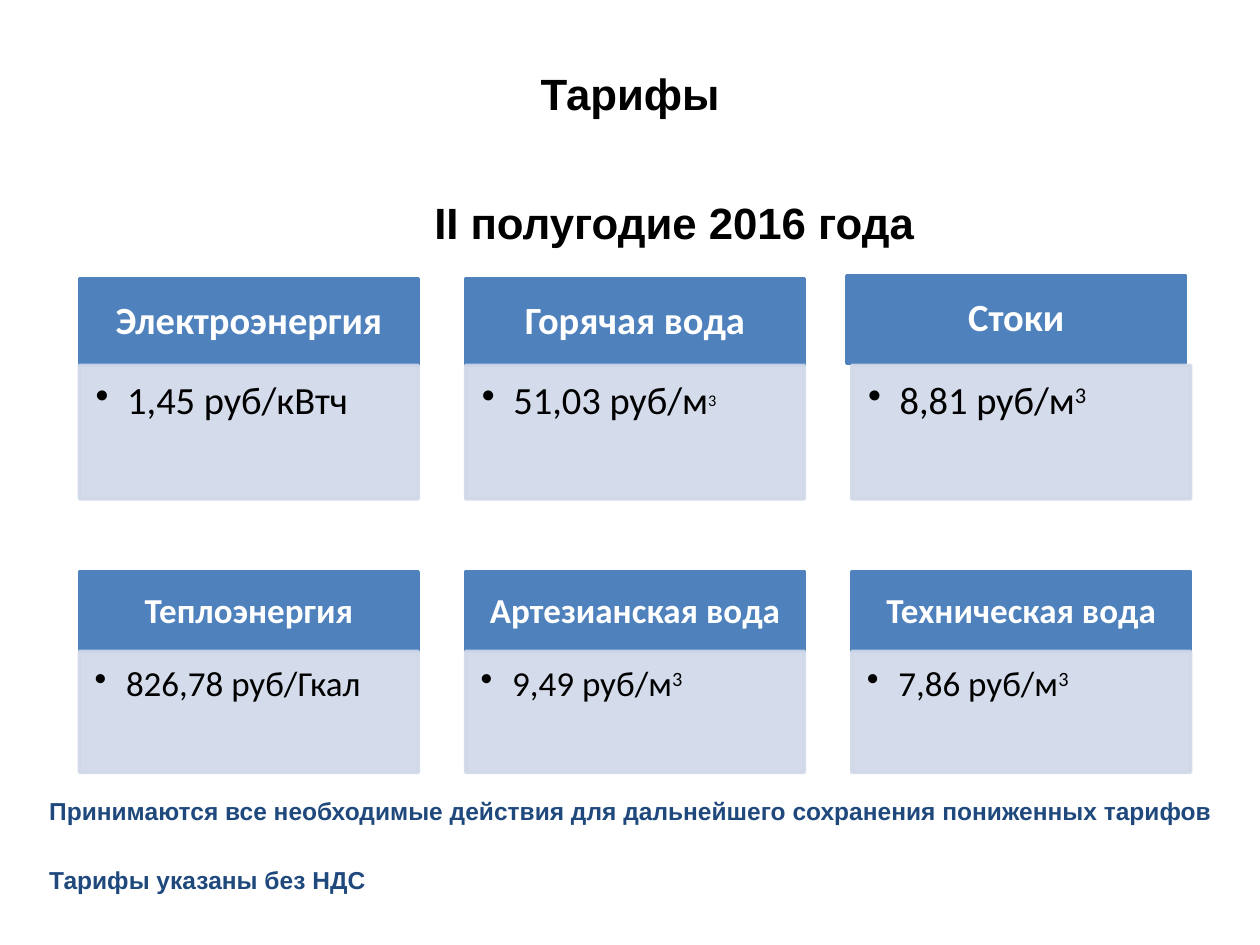
from lxml import etree
from pptx import Presentation
from pptx.dml.color import RGBColor
from pptx.enum.shapes import MSO_SHAPE
from pptx.enum.text import MSO_ANCHOR, PP_ALIGN
from pptx.oxml.ns import qn
from pptx.util import Inches, Pt

BLUE, PALE, NAVY = "4F81BD", "D0D8E8", "1F497D"
CARD_LEFT, CARD_STEP, CARD_WIDTH = 0.63, 3.065, 2.69

# Each tariff: name, price, superscript, superscript size
TOP_TARIFFS = [
    ("Электроэнергия", "1,45 руб/кВтч", "", 22),
    ("Горячая вода", "51,03 руб/м", "3", 16),
    ("Стоки", "8,81 руб/м", "3", 22),
]
BOTTOM_TARIFFS = [
    ("Теплоэнергия", "826,78 руб/Гкал", "", 20),
    ("Артезианская вода", "9,49 руб/м", "3", 20),
    ("Техническая вода", "7,86 руб/м", "3", 20),
]


def color(value):
    return RGBColor.from_string(value)


def style(font, name, size, value, bold=False):
    font.name, font.size, font.bold = name, Pt(size), bold
    font.color.rgb = color(value)


def set_frame(frame, insets, anchor):
    frame.word_wrap = True
    frame.vertical_anchor = anchor
    (frame.margin_left, frame.margin_top,
     frame.margin_right, frame.margin_bottom) = [Inches(i) for i in insets]


def add_text(page, box, lines, size, value, align=PP_ALIGN.LEFT,
             insets=(0, 0, 0, 0), anchor=MSO_ANCHOR.TOP, gap=0):
    shape = page.shapes.add_textbox(*[Inches(v) for v in box])
    frame = shape.text_frame
    set_frame(frame, insets, anchor)
    frame.text = "\n".join(lines)
    for index, para in enumerate(frame.paragraphs):
        para.alignment = align
        if index:
            para.space_before = Pt(gap)
        for span in para.runs:
            style(span.font, "Arial", size, value, bold=True)


def add_panel(page, box, fill, insets, anchor, opacity=100):
    panel = page.shapes.add_shape(MSO_SHAPE.RECTANGLE,
                                  *[Inches(v) for v in box])
    panel.shadow.inherit = False
    panel.fill.solid()
    panel.fill.fore_color.rgb = color(fill)
    panel.line.color.rgb = color(fill)
    panel.line.width = Pt(2)
    if opacity < 100:
        for node in panel.element.spPr.iter(qn("a:srgbClr")):
            alpha = etree.SubElement(node, qn("a:alpha"))
            alpha.set("val", str(opacity * 1000))
    set_frame(panel.text_frame, insets, anchor)
    para = panel.text_frame.paragraphs[0]
    para.line_spacing = 0.9
    return para


def add_bullet(para):
    properties = para._p.get_or_add_pPr()
    properties.set("marL", str(Inches(0.25)))
    properties.set("indent", str(-Inches(0.25)))
    etree.SubElement(properties, qn("a:buChar")).set("char", "•")


def add_card(page, head_box, price_box, tariff, size):
    name, price, power, power_size = tariff
    # Heading
    side, edge = (0.17, 0.1) if size == 22 else (0.16, 0.09)
    para = add_panel(page, head_box, BLUE, (side, edge, side, edge),
                     MSO_ANCHOR.MIDDLE)
    para.text = name
    para.alignment = PP_ALIGN.CENTER
    style(para.runs[0].font, "Calibri", size, "FFFFFF", bold=True)

    # Price
    inset = 0.13 if size == 22 else 0.12
    para = add_panel(page, price_box, PALE, (inset, inset, side, inset + 0.05),
                     MSO_ANCHOR.TOP, opacity=90)
    para.alignment = PP_ALIGN.LEFT
    add_bullet(para)
    span = para.add_run()
    span.text = price
    style(span.font, "Calibri", size, "000000")
    if power:
        span = para.add_run()
        span.text = power
        style(span.font, "Calibri", power_size, "000000")
        span.font._element.set("baseline", "30000")


def add_card_row(page, box, tariffs, size, head_height, moved_heads):
    left, top, width, height = box
    for index, tariff in enumerate(tariffs):
        x = left + index * CARD_STEP
        dx, dy = moved_heads.get(index, (0, 0))
        head_box = (x + dx, top + dy, width, head_height)
        price_box = (x, top + head_height, width, height - head_height)
        add_card(page, head_box, price_box, tariff, size)


def main():
    deck = Presentation()
    deck.slide_width, deck.slide_height = Inches(10), Inches(7.5)
    page = deck.slides.add_slide(deck.slide_layouts[6])

    # Title and period
    add_text(page, (0.5, 0.3, 9, 0.87), ["Тарифы"], 25, "000000",
             PP_ALIGN.CENTER, anchor=MSO_ANCHOR.MIDDLE)
    add_text(page, (0.55, 1.33, 8.94, 0.66), ["II полугодие 2016 года"], 25,
             "000000", PP_ALIGN.CENTER, insets=(0.66, 0.22, 0, 0))

    # Tariff cards; the third heading of the top row sits slightly off the grid
    add_card_row(page, (CARD_LEFT, 2.21, CARD_WIDTH, 1.75), TOP_TARIFFS, 22,
                 0.69, {2: (-0.04, -0.02)})
    add_card_row(page, (CARD_LEFT, 4.54, CARD_WIDTH, 1.59), BOTTOM_TARIFFS, 20,
                 0.63, {})

    # Notes below the cards
    add_text(page, (0.39, 6.25, 9.41, 0.86),
             ["Принимаются все необходимые действия для дальнейшего "
              "сохранения пониженных тарифов",
              "Тарифы указаны без НДС"],
             14, NAVY, insets=(0, 0.07, 0, 0.05), gap=22.5)

    deck.save("out.pptx")


if __name__ == "__main__":
    main()
